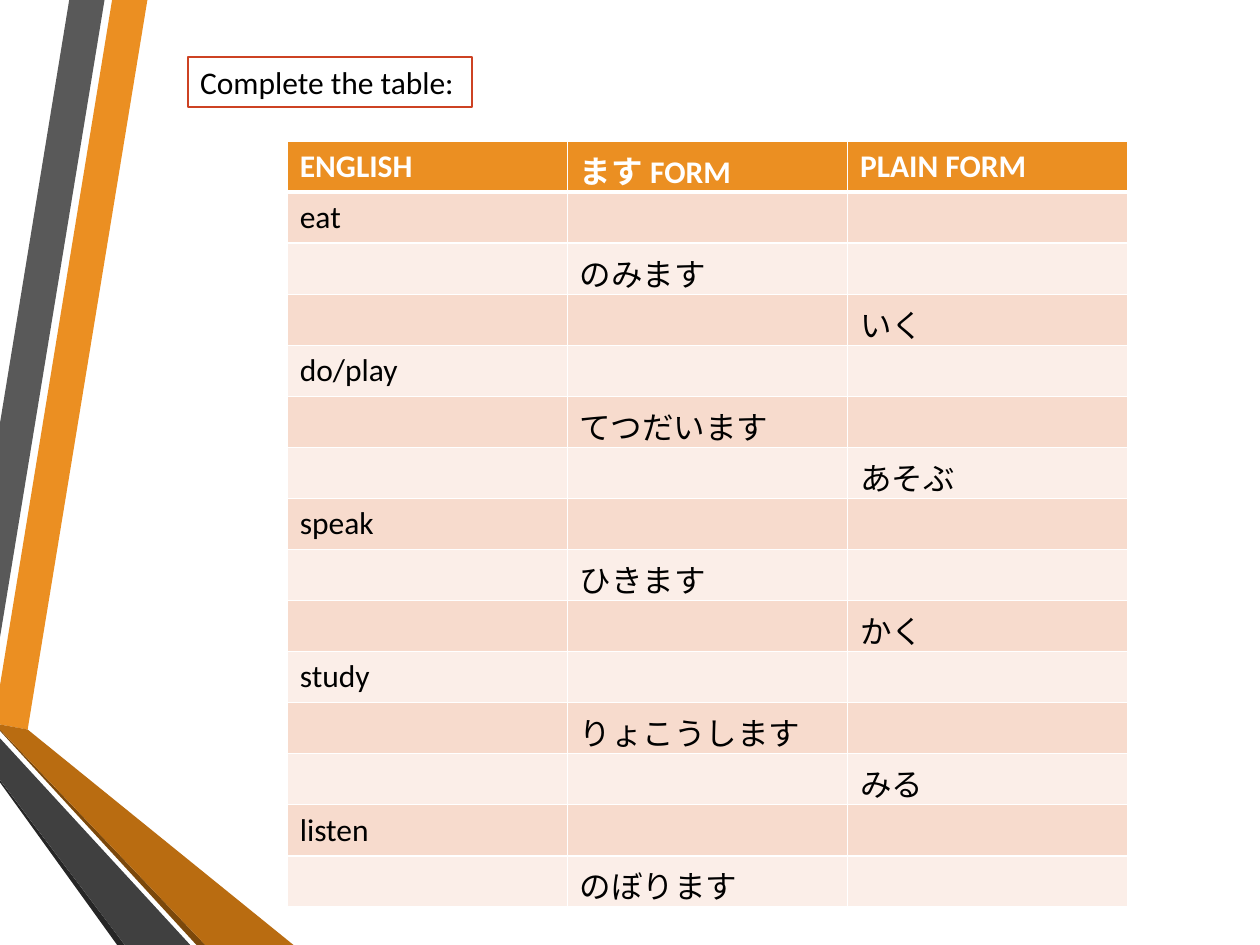
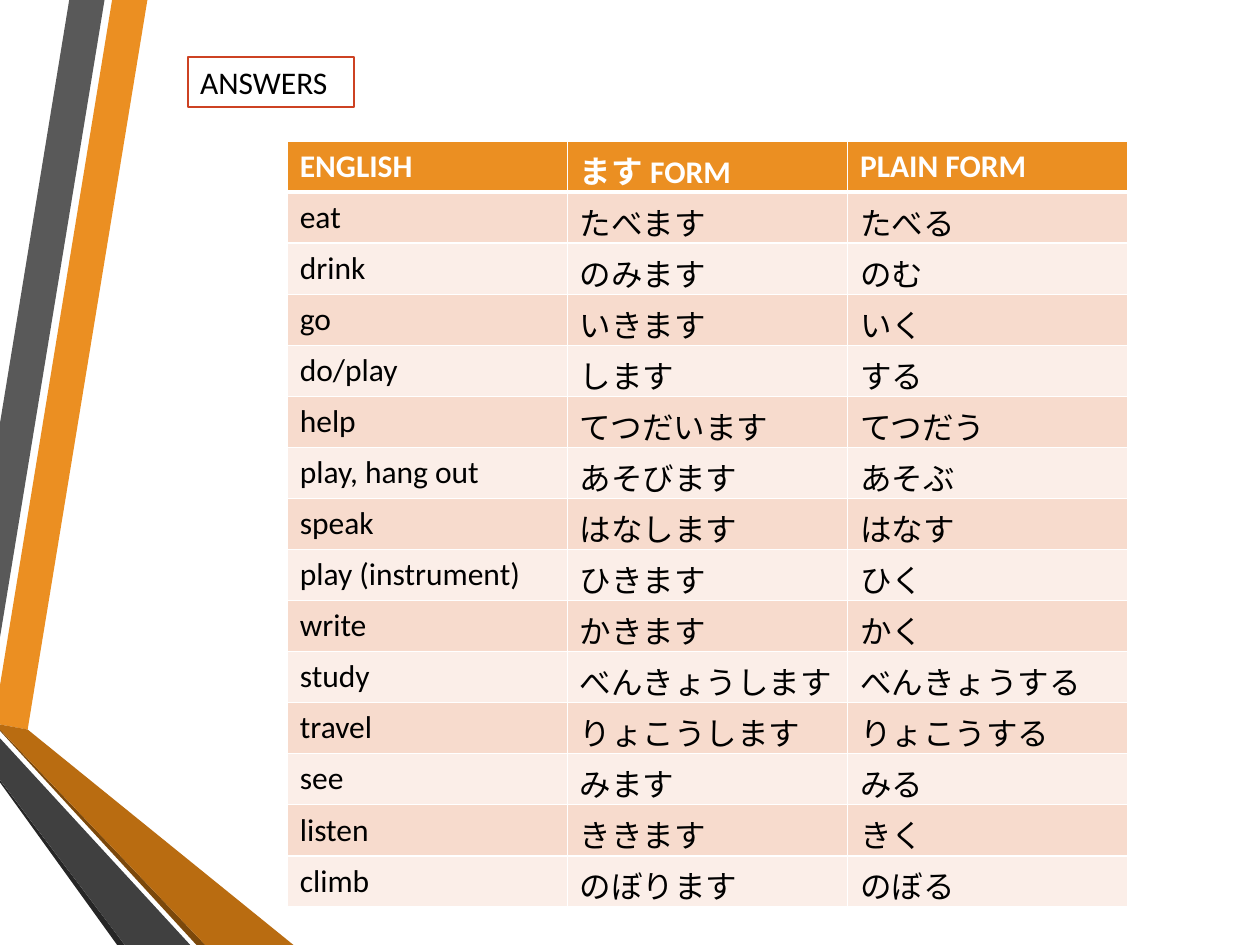
from lxml import etree
from pptx import Presentation
from pptx.dml.color import RGBColor
from pptx.enum import shapes, text
from pptx.oxml import ns
from pptx.util import Inches, Pt

WHITE = RGBColor(0xFF, 0xFF, 0xFF)
BLACK = RGBColor(0x00, 0x00, 0x00)
ORANGE = RGBColor(0xEB, 0x8F, 0x22)
RED = RGBColor(0xCD, 0x42, 0x23)
ROW_TINTS = (RGBColor(0xFB, 0xEE, 0xE8), RGBColor(0xF7, 0xDB, 0xCD))
FONT = "Calibri"

RIBBONS = [
    (ORANGE, [(0, 5.44), (0, 5.75), (0.22, 5.79), (1.17, 0), (0.89, 0)]),
    (RGBColor(0x59, 0x59, 0x59), [(0.83, 0), (0.55, 0), (0, 3.36), (0, 5.06)]),
    (RGBColor(0x26, 0x26, 0x26), [(0, 6.19), (0, 6.21), (0.93, 7.5), (0.99, 7.5)]),
    (RGBColor(0x7B, 0x48, 0x0B), [(0, 5.79), (0, 5.8), (1.56, 7.5), (1.63, 7.5)]),
    (RGBColor(0xB9, 0x6C, 0x11),
     [(0, 5.79), (1.63, 7.5), (2.33, 7.5), (0.22, 5.79), (0, 5.75)]),
    (RGBColor(0x40, 0x40, 0x40), [(0, 6.19), (0.99, 7.5), (1.51, 7.5), (0, 5.86)]),
]

HEADINGS = ("ENGLISH", "ます FORM", "PLAIN FORM")
VERBS = [
    ("eat", "たべます", "たべる"),
    ("drink", "のみます", "のむ"),
    ("go", "いきます", "いく"),
    ("do/play", "します", "する"),
    ("help", "てつだいます", "てつだう"),
    ("play, hang out", "あそびます", "あそぶ"),
    ("speak", "はなします", "はなす"),
    ("play (instrument)", "ひきます", "ひく"),
    ("write", "かきます", "かく"),
    ("study", "べんきょうします", "べんきょうする"),
    ("travel", "りょこうします", "りょこうする"),
    ("see", "みます", "みる"),
    ("listen", "ききます", "きく"),
    ("climb", "のぼります", "のぼる"),
]


def style_text(paragraph, color, bold=False):
    font = paragraph.font
    font.name, font.size, font.bold = FONT, Pt(18), bold
    font.color.rgb = color


def add_ribbons(slide):
    for color, corners in RIBBONS:
        start, *others = [(Inches(x), Inches(y)) for x, y in corners]
        outline = slide.shapes.build_freeform(*start)
        outline.add_line_segments(others, close=True)
        ribbon = outline.convert_to_shape()
        ribbon.shadow.inherit = False
        ribbon.fill.solid()
        ribbon.fill.fore_color.rgb = color
        ribbon.line.fill.background()


def add_instruction(slide, wording, width):
    instruction = slide.shapes.add_shape(
        shapes.MSO_SHAPE.RECTANGLE, Inches(1.49), Inches(0.45), Inches(width), Inches(0.4))
    instruction.shadow.inherit = False
    instruction.fill.solid()
    instruction.fill.fore_color.rgb = WHITE
    instruction.line.color.rgb = RED
    instruction.line.width = Pt(1.25)
    frame = instruction.text_frame
    frame.word_wrap = False
    frame.auto_size = text.MSO_AUTO_SIZE.SHAPE_TO_FIT_TEXT
    frame.vertical_anchor = text.MSO_ANCHOR.TOP
    frame.text = wording
    frame.paragraphs[0].alignment = text.PP_ALIGN.LEFT
    style_text(frame.paragraphs[0], BLACK)


def set_borders(cell, top, bottom):
    properties = cell._tc.get_or_add_tcPr()
    for side, points in (("L", 1), ("R", 1), ("T", top), ("B", bottom)):
        border = etree.SubElement(properties, ns.qn(f"a:ln{side}"), w=str(Pt(points)))
        fill = etree.SubElement(border, ns.qn("a:solidFill"))
        etree.SubElement(fill, ns.qn("a:srgbClr"), val=str(WHITE))


def add_verb_table(slide, verbs):
    rows = [HEADINGS, *verbs]
    table = slide.shapes.add_table(
        len(rows), len(HEADINGS), Inches(2.28), Inches(1.12), Inches(6.67), Inches(6.08)).table
    for r, words in enumerate(rows):
        is_heading = r == 0
        for c, word in enumerate(words):
            cell = table.cell(r, c)
            set_borders(cell, top=3 if r == 1 else 1, bottom=3 if is_heading else 1)
            cell.fill.solid()
            cell.fill.fore_color.rgb = ORANGE if is_heading else ROW_TINTS[r % 2]
            cell.text = word
            style_text(cell.text_frame.paragraphs[0],
                       WHITE if is_heading else BLACK, is_heading)


def keep_one_clue(verbs):
    return [[word if c == r % 3 else "" for c, word in enumerate(words)]
            for r, words in enumerate(verbs)]


def add_verb_slide(deck, instruction, width, verbs):
    slide = deck.slides.add_slide(deck.slide_layouts[6])
    add_ribbons(slide)
    add_instruction(slide, instruction, width)
    add_verb_table(slide, verbs)


def main():
    deck = Presentation()
    deck.slide_width, deck.slide_height = Inches(10), Inches(7.5)
    add_verb_slide(deck, "Complete the table:", 2.26, keep_one_clue(VERBS))
    add_verb_slide(deck, "ANSWERS", 1.32, VERBS)
    deck.save("out.pptx")


if __name__ == "__main__":
    main()
